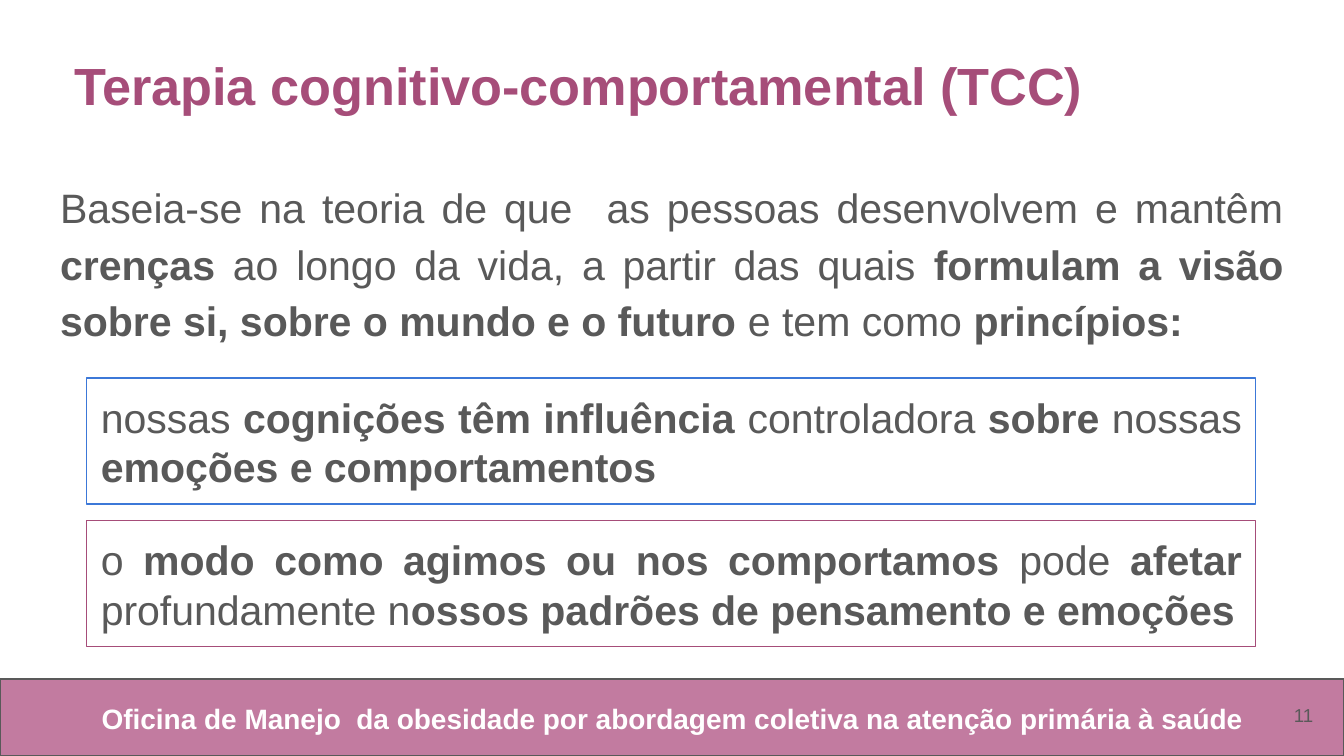
import pptx
import pptx.util
import pptx.dml.color
import pptx.enum.shapes
import pptx.enum.text

ALIGN = pptx.enum.text.PP_ALIGN
ANCHOR = pptx.enum.text.MSO_ANCHOR
GREY, WHITE, PLUM, PINK, BLUE = "595959", "FFFFFF", "A64D79", "C27BA0", "3C78D8"

TITLE = "Terapia cognitivo-comportamental (TCC)"
FOOTER = "**Oficina de Manejo  da obesidade por abordagem coletiva na atenção primária à saúde**"
INTRO = (
    "Baseia-se na teoria de que  as pessoas desenvolvem e mantêm **crenças** ao longo da vida, "
    "a partir das quais **formulam a visão sobre si, sobre o mundo e o futuro** "
    "e tem como **princípios:**"
)
PRINCIPLES = [
    (BLUE, "nossas **cognições têm influência** controladora **sobre** nossas "
           "**emoções e comportamentos**"),
    (PLUM, "o **modo como agimos ou nos comportamos** pode **afetar **"
           "profundamente n**ossos padrões de pensamento e emoções**"),
]


def px(value):
    return pptx.util.Emu(value * 9525)


def colour(value):
    return pptx.dml.color.RGBColor.from_string(value)


def place(shape, box):
    for name, value in zip(("left", "top", "width", "height"), box):
        setattr(shape, name, px(value))


def write(shape, text, size, text_colour, alignment, spacing=1.0, anchor=ANCHOR.TOP, left=10):
    frame = shape.text_frame
    frame_format = {
        "word_wrap": True,
        "vertical_anchor": anchor,
        "margin_left": px(left),
        "margin_top": px(10),
        "margin_right": px(10),
        "margin_bottom": px(10),
    }
    for name, value in frame_format.items():
        setattr(frame, name, value)
    paragraph = frame.paragraphs[0]
    paragraph.alignment = alignment
    paragraph.line_spacing = spacing
    for index, part in enumerate(text.split("**")):
        if part:
            run = paragraph.add_run()
            run.text = part
            font_format = {"name": "Arial", "size": pptx.util.Pt(size), "bold": index % 2 == 1}
            for name, value in font_format.items():
                setattr(run.font, name, value)
            run.font.color.rgb = colour(text_colour)


def add_text(slide, box, *arguments, **options):
    shape = slide.shapes.add_textbox(*map(px, box))
    write(shape, *arguments, **options)


def add_rectangle(slide, box, line, fill=None):
    rectangle = pptx.enum.shapes.MSO_SHAPE.RECTANGLE
    shape = slide.shapes.add_shape(rectangle, *map(px, box))
    shape.shadow.inherit = False
    if fill:
        shape.fill.solid()
        shape.fill.fore_color.rgb = colour(fill)
    else:
        shape.fill.background()
    shape.line.color.rgb = colour(line)
    shape.line.width = pptx.util.Pt(0.75)
    return shape


def add_title(slide):
    title = slide.shapes.title
    place(title, (33, 28, 766, 60))
    write(title, f"**{TITLE}**", 28, PLUM, ALIGN.LEFT, left=20)


def add_footer(slide):
    add_rectangle(slide, (0, 485, 960, 55), GREY, PINK)
    add_text(slide, (33, 491, 895, 43), FOOTER, 15, WHITE, ALIGN.CENTER)
    add_text(slide, (890, 490, 58, 41), "11", 10, GREY, ALIGN.RIGHT, anchor=ANCHOR.MIDDLE)


def add_principles(slide):
    for index, (line, text) in enumerate(PRINCIPLES):
        shape = add_rectangle(slide, (62, 270 + 102 * index, 835, 90), line)
        write(shape, text, 22, GREY, ALIGN.JUSTIFY)


def main():
    presentation = pptx.Presentation()
    presentation.slide_width = px(960)
    presentation.slide_height = px(540)
    slide = presentation.slides.add_slide(presentation.slide_layouts[5])
    add_footer(slide)
    add_title(slide)
    add_text(slide, (33, 115, 894, 138), INTRO, 22, GREY, ALIGN.JUSTIFY, spacing=1.15)
    add_principles(slide)
    presentation.save("out.pptx")


if __name__ == "__main__":
    main()
